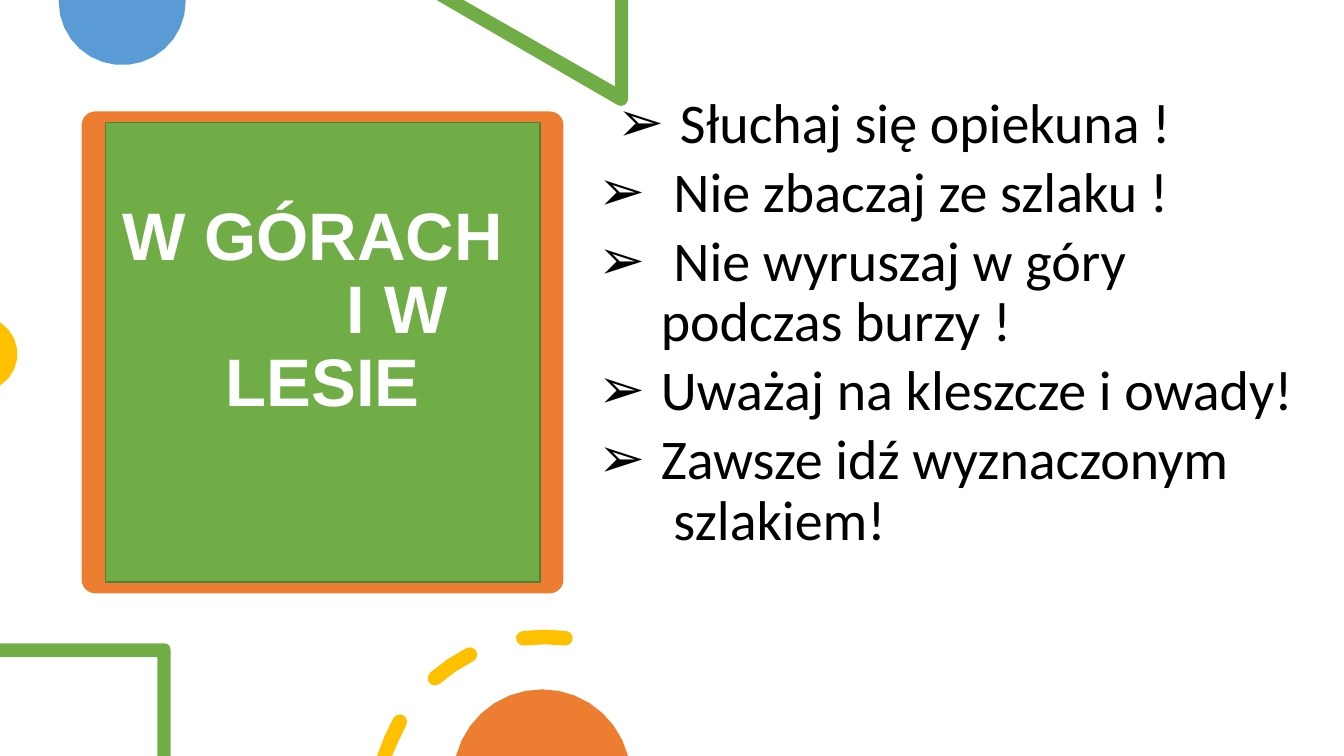
"""Build a slide with safety rules for trips to the mountains and the forest."""
from dataclasses import dataclass
from math import acos, ceil, cos, degrees, radians, sin

from lxml import etree
from pptx import Presentation
from pptx.dml.color import RGBColor
from pptx.enum.shapes import MSO_SHAPE
from pptx.enum.text import MSO_ANCHOR, MSO_AUTO_SIZE, PP_ALIGN
from pptx.oxml.ns import qn
from pptx.util import Cm, Pt

ROUNDED = MSO_SHAPE.ROUNDED_RECTANGLE
MIDDLE, TOP = MSO_ANCHOR.MIDDLE, MSO_ANCHOR.TOP
CENTER, LEFT = PP_ALIGN.CENTER, PP_ALIGN.LEFT
NO_AUTOFIT = MSO_AUTO_SIZE.NONE
WIDTH, HEIGHT = 33.87, 19.05
GREEN, ORANGE, BLUE, YELLOW = "70AD47", "ED7D31", "5B9BD5", "FFC000"
TOLERANCE = 0.01
Points = list[tuple[float, float]]


@dataclass
class Line:
    text: str
    left: float = 0
    right: float = 0
    indent: float = 0
    bullet: str = ""


@dataclass
class Decoration:
    contours: list[Points]
    color: str


def rgb(color: str) -> RGBColor:
    return RGBColor.from_string(color)


def polar(cx: float, cy: float, radius: float, angle: float) -> tuple[float, float]:
    return cx + radius * cos(radians(angle)), cy + radius * sin(radians(angle))


def arc(cx: float, cy: float, radius: float, start: float, end: float) -> Points:
    widest = 2 * degrees(acos(1 - TOLERANCE / radius))
    steps = ceil(abs(end - start) / widest)
    return [polar(cx, cy, radius, start + (end - start) * i / steps)
            for i in range(steps + 1)]


def dash(start: float, end: float, cut: bool = False) -> Points:
    cx, cy, radius, half = 13.72, 20.23, 4.18, 0.185
    outer = arc(cx, cy, radius + half, start, end)
    inner = arc(cx, cy, radius - half, end, start)
    end_cap = arc(*polar(cx, cy, radius, end), half, end, end + 180)
    if cut:
        outer[0], inner[-1] = (9.5, HEIGHT), (9.88, HEIGHT)
        return outer[:-1] + end_cap + inner[1:]
    start_cap = arc(*polar(cx, cy, radius, start), half, start + 180, start + 360)
    return outer[:-1] + end_cap + inner[1:-1] + start_cap[:-1]


def add_decoration(s, item: Decoration) -> None:
    contours = [[(Cm(x), Cm(y)) for x, y in c] for c in item.contours]
    builder = s.shapes.build_freeform(*contours[0][0])
    for i, contour in enumerate(contours):
        if i:
            builder.move_to(*contour[0])
        builder.add_line_segments(contour[1:], close=True)
    sp = builder.convert_to_shape()
    sp.shadow.inherit = False
    sp.fill.solid()
    sp.fill.fore_color.rgb = rgb(item.color)
    sp.line.fill.background()


def place(sp, left: float, top: float, width: float, height: float) -> None:
    sp.left, sp.top, sp.width, sp.height = Cm(left), Cm(top), Cm(width), Cm(height)


def write(tf, lines: list[Line], *, font: str, size: float, color: str,
          bold: bool = False, align=LEFT, anchor=TOP, after: float = 0) -> None:
    tf.word_wrap, tf.auto_size, tf.vertical_anchor = True, NO_AUTOFIT, anchor
    for i, line in enumerate(lines):
        p = tf.add_paragraph() if i else tf.paragraphs[0]
        p.text = line.text
        p.alignment, p.line_spacing = align, 0.9
        p.space_before, p.space_after = Pt(0), Pt(after)
        for r in p.runs:
            r.font.name, r.font.size, r.font.bold = font, Pt(size), bold
            r.font.color.rgb = rgb(color)
        pPr = p._p.get_or_add_pPr()
        for name, value in (("marL", line.left), ("marR", line.right),
                            ("indent", line.indent)):
            pPr.set(name, str(int(Cm(value))))
        if line.bullet:
            etree.SubElement(pPr, qn("a:buFont")).set("typeface", "Arial")
            etree.SubElement(pPr, qn("a:buChar")).set("char", line.bullet)


def rule(text: str, left: float = 2.54) -> Line:
    return Line(text, left=left, indent=-1.57, bullet="➢")


TITLE = [Line("W GÓRACH", right=0.5), Line("I W", left=3.75), Line("LESIE")]
RULES = [
    rule("Słuchaj się opiekuna !", 3.02),
    rule(" Nie zbaczaj ze szlaku !"),
    rule(" Nie wyruszaj w góry podczas burzy !"),
    rule("Uważaj na kleszcze i owady!"),
    rule("Zawsze idź wyznaczonym\v szlakiem!"),
]
TRIANGLE = [(15.83, 0), (15.5, 0), (15.5, 2.18), (11.68, 0), (11, 0),
            (15.57, 2.65)] + arc(15.65, 2.49, 0.18, 90, 0)
SQUARE = [(0, 16.21), (0, 16.56), (3.97, 16.56), (3.97, HEIGHT),
          (4.3, HEIGHT)] + arc(4.14, 16.37, 0.16, 0, -90)
DASHES = [dash(-164, -150.7, cut=True), dash(-131.3, -116.7), dash(-97.3, -82.7)]
DECORATIONS = [
    Decoration([[(4.68, 0)] + arc(3.08, 0.04, 1.6, 0, 180) + [(1.48, 0)]], BLUE),
    Decoration([TRIANGLE], GREEN),
    Decoration([arc(-0.5, 8.92, 0.94, -57.5, 57.5)], YELLOW),
    Decoration([SQUARE], GREEN),
    Decoration(DASHES, YELLOW),
    Decoration([arc(13.66, 19.61, 2.24, -165.5, -14.5)], ORANGE),
]


def main() -> None:
    prs = Presentation()
    prs.slide_width, prs.slide_height = Cm(WIDTH), Cm(HEIGHT)
    s = prs.slides.add_slide(prs.slide_layouts[1])
    title, body = s.shapes.title, s.placeholders[1]

    panel = s.shapes.add_shape(ROUNDED, Cm(2.06), Cm(2.81), Cm(12.14), Cm(12.14))
    panel.adjustments[0] = 0.028
    panel.shadow.inherit = False
    panel.fill.solid()
    panel.fill.fore_color.rgb = rgb(ORANGE)
    panel.line.fill.background()
    title.element.addprevious(panel.element)

    place(title, 2.66, 3.09, 10.95, 11.58)
    title.fill.solid()
    title.fill.fore_color.rgb = rgb(GREEN)
    title.line.color.rgb = rgb("538035")
    title.line.width = Pt(1)
    title.text_frame.margin_bottom = Cm(2.18)
    write(title.text_frame, TITLE, font="Arial", size=48, color="FFFFFF",
          bold=True, align=CENTER, anchor=MIDDLE)

    place(body, 13.86, 2.27, 19.23, 13.59)
    write(body.text_frame, RULES, font="Calibri", size=40, color="000000", after=6)

    for item in DECORATIONS:
        add_decoration(s, item)
    prs.save("out.pptx")


if __name__ == "__main__":
    main()
